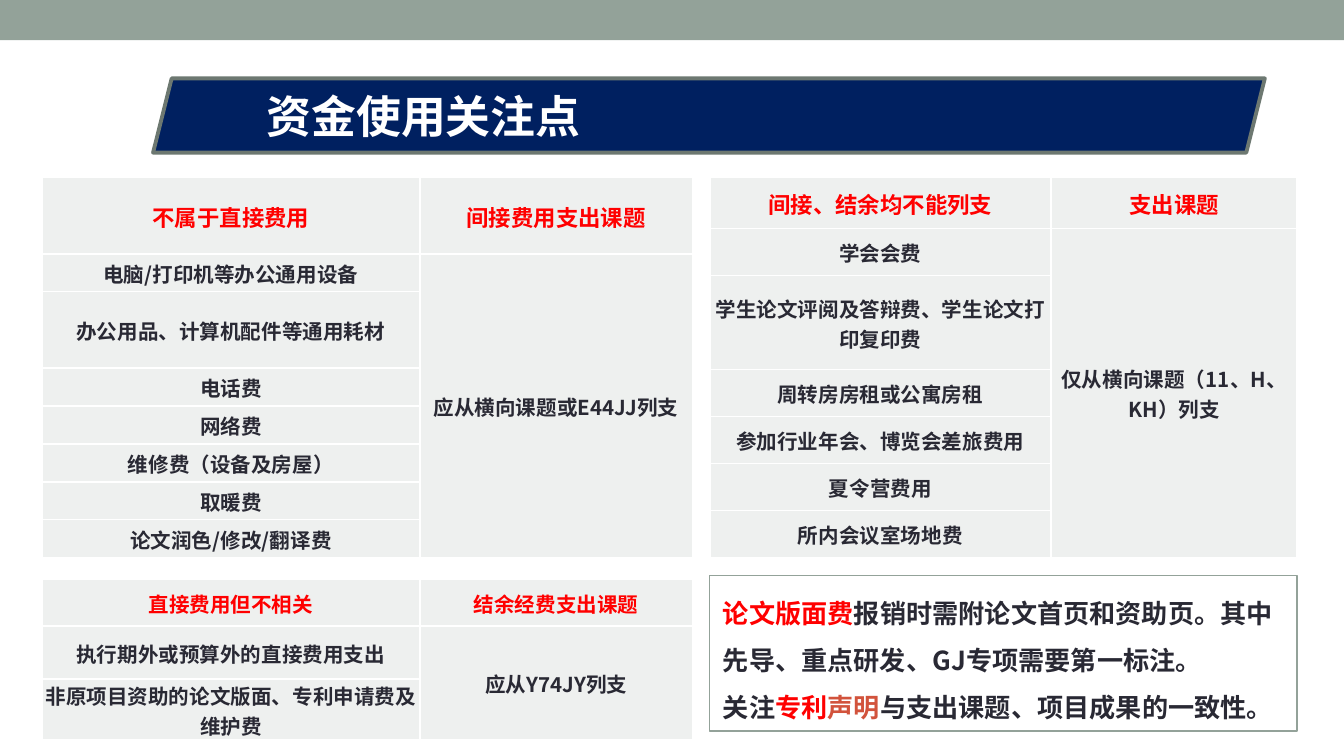
import pptx
import pptx.util
import pptx.dml.color
import pptx.enum.shapes
import pptx.enum.text
import pptx.oxml
import pptx.oxml.ns

Pt = pptx.util.Pt
RGB = pptx.dml.color.RGBColor
Shape = pptx.enum.shapes.MSO_SHAPE
Align = pptx.enum.text.PP_ALIGN
Anchor = pptx.enum.text.MSO_ANCHOR

SAGE = RGB(0x93, 0xA2, 0x99)
GRAY = RGB(0x6D, 0x78, 0x71)
NAVY = RGB(0x00, 0x20, 0x60)
PALE = RGB(0xEE, 0xF0, 0xEF)
WHITE = RGB(0xFF, 0xFF, 0xFF)
RED = RGB(0xFF, 0x00, 0x00)
RUST = RGB(0xD2, 0x53, 0x3C)
INK = RGB(0x29, 0x29, 0x34)
FONT = "Noto Sans CJK SC"

TITLE = "资金使用关注点"

LEFT, RIGHT = 22.6, 380.2
TOP, LOW = 95.2, 310.5
WIDE, SLIM = (202.3, 146.2), (182.9, 131.8)
UNIT = 20.38

# Each table: heads, items of the first column, the merged answer beside them
TABLES = [
    dict(at=(LEFT, TOP), cols=WIDE, size=12,
         rows=[UNIT * n for n in (2, 1, 2, 1, 1, 1, 1, 1)],
         heads=("不属于直接费用", "间接费用支出课题"),
         items=["电脑/打印机等办公通用设备", "办公用品、计算机配件等通用耗材",
                "电话费", "网络费", "维修费（设备及房屋）", "取暖费",
                "论文润色/修改/翻译费"],
         answer="应从横向课题或E44JJ列支"),
    dict(at=(LEFT, LOW), cols=WIDE, size=11, rows=[25, 28.4, 28.4],
         heads=("直接费用但不相关", "结余经费支出课题"),
         items=["执行期外或预算外的直接费用支出",
                "非原项目资助的论文版面、专利申请费及维护费"],
         answer="应从Y74JY列支"),
    dict(at=(RIGHT, TOP), cols=SLIM, size=12,
         rows=[27.2] + [25.22 * n for n in (1, 2, 1, 1, 1, 1)],
         heads=("间接、结余均不能列支", "支出课题"),
         items=["学会会费", "学生论文评阅及答辩费、学生论文打印复印费",
                "周转房房租或公寓房租", "参加行业年会、博览会差旅费用",
                "夏令营费用", "所内会议室场地费"],
         answer="仅从横向课题（11、H、KH）列支"),
]

NOTES = [
    [("论文版面费", RED),
     ("报销时需附论文首页和资助页。其中先导、重点研发、GJ专项需要第一标注。", INK)],
    [("关注", INK), ("专利", RED), ("声明", RUST),
     ("与支出课题、项目成果的一致性。", INK)],
]


def write(para, text, size, color):
    run = para.add_run()
    run.text = text
    font = run.font
    font.size, font.bold, font.name = Pt(size), True, FONT
    font.color.rgb = color
    # East Asian glyphs take their own font entry
    face = pptx.oxml.parse_xml(
        f'<a:ea {pptx.oxml.ns.nsdecls("a")} typeface="{FONT}"/>')
    font._element.find(pptx.oxml.ns.qn("a:latin")).addnext(face)


def draw(slide, kind, box, fill=None, line=None, weight=1):
    shape = slide.shapes.add_shape(kind, *map(Pt, box))
    shape.shadow.inherit = False
    if fill is None:
        shape.fill.background()
    else:
        shape.fill.solid()
        shape.fill.fore_color.rgb = fill
    if line is None:
        shape.line.fill.background()
    else:
        shape.line.color.rgb = line
        shape.line.width = Pt(weight)
    return shape


def border(cell):
    props = cell._tc.get_or_add_tcPr()
    for side in "LRTB":
        props.append(pptx.oxml.parse_xml(
            f'<a:ln{side} {pptx.oxml.ns.nsdecls("a")} w="{Pt(1)}">'
            f'<a:solidFill><a:srgbClr val="{WHITE}"/></a:solidFill>'
            f'</a:ln{side}>'))


def put(cell, text, size, color):
    para = cell.text_frame.paragraphs[0]
    para.alignment = Align.CENTER
    write(para, text, size, color)


def grid(slide, data):
    rows, cols = data["rows"], data["cols"]
    frame = slide.shapes.add_table(
        len(rows), len(cols), *map(Pt, (*data["at"], sum(cols), sum(rows))))
    table = frame.table
    for col, width in zip(table.columns, cols):
        col.width = Pt(width)
    for row, height in zip(table.rows, rows):
        row.height = Pt(height)
    for cell in table.iter_cells():
        border(cell)
        cell.fill.solid()
        cell.fill.fore_color.rgb = PALE
        cell.vertical_anchor = Anchor.MIDDLE
        cell.margin_left = cell.margin_right = cell.margin_top = Pt(0.7)
        cell.margin_bottom = 0
    for i, head in enumerate(data["heads"]):
        put(table.cell(0, i), head, data["size"], RED)
    for i, item in enumerate(data["items"], 1):
        put(table.cell(i, 0), item, 11, INK)
    table.cell(1, 1).merge(table.cell(len(rows) - 1, 1))
    put(table.cell(1, 1), data["answer"], 11, INK)


def main():
    deck = pptx.Presentation()
    deck.slide_width, deck.slide_height = Pt(720), Pt(405)
    slide = deck.slides.add_slide(deck.slide_layouts[6])

    draw(slide, Shape.RECTANGLE, (0, 0, 720, 21.5), SAGE)
    title = draw(slide, Shape.PARALLELOGRAM, (82, 42, 595.6, 39.8),
                 NAVY, GRAY, 2.08)
    title.text_frame.vertical_anchor = Anchor.MIDDLE
    para = title.text_frame.paragraphs[0]
    para.alignment = Align.LEFT
    write(para, TITLE, 24, WHITE)

    for data in TABLES:
        grid(slide, data)

    note = draw(slide, Shape.RECTANGLE, (RIGHT, 308.2, sum(SLIM), 83.5),
                line=SAGE, weight=0.75)
    frame = note.text_frame
    frame.word_wrap = True
    frame.vertical_anchor = Anchor.TOP
    for i, runs in enumerate(NOTES):
        para = frame.add_paragraph() if i else frame.paragraphs[0]
        para.alignment = Align.LEFT
        para.line_spacing = 1.5
        for text, color in runs:
            write(para, text, 14, color)

    deck.save("out.pptx")


if __name__ == "__main__":
    main()
